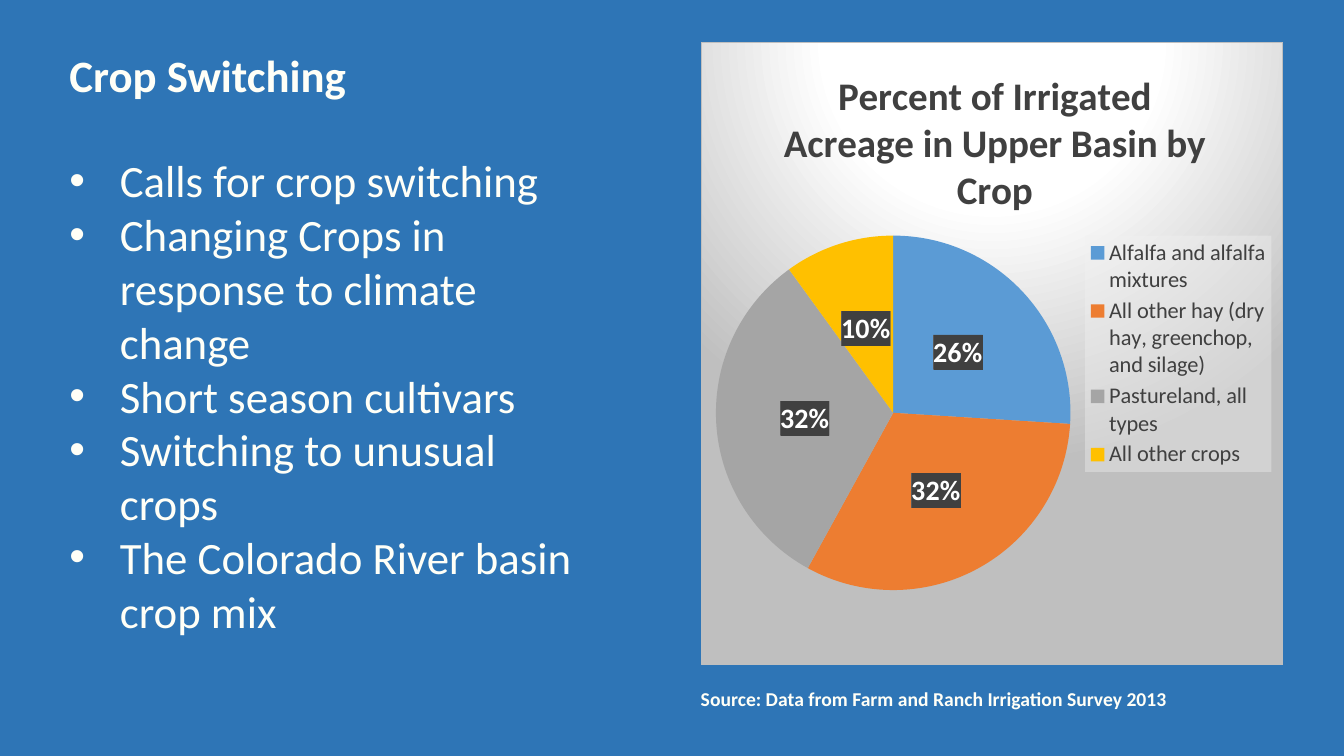
import pptx
import pptx.chart.data
import pptx.dml.color
import pptx.enum.chart
import pptx.enum.shapes
import pptx.oxml
import pptx.oxml.ns
import pptx.util

Inches = pptx.util.Inches
qn = pptx.oxml.ns.qn

HEADING = "Crop Switching"
TOPICS = [
    "Calls for crop switching",
    "Changing Crops in response to climate change",
    "Short season cultivars",
    "Switching to unusual crops",
    "The Colorado River basin crop mix",
]
SOURCE = "Source: Data from Farm and Ranch Irrigation Survey 2013"
CHART_TITLE = "Percent of Irrigated Acreage in Upper Basin by Crop"
CROPS = [  # name, percent, colour
    ("Alfalfa and alfalfa mixtures", 26, "5B9BD5"),
    ("All other hay (dry hay, greenchop, and silage)", 32, "ED7D31"),
    ("Pastureland, all types", 32, "A5A5A5"),
    ("All other crops", 10, "FFC000"),
]
THEME = {
    "font": "Calibri", "page": "2E75B6", "ink": "FFFFF7", "dark": "404040", "label": "FFFFFF",
    "body": 32, "title": 28, "percent": 20, "legend": 16, "source": 14,
}
BOXES = {  # left, top, width, height
    "heading": (0.59, 0.42, 10.74, 1.04),
    "topics": (0.59, 1.47, 5.19, 6.43),
    "chart": (6.95, 0.42, 5.78, 6.18),
    "source": (6.95, 6.81, 5.12, 0.24),
}
LAYOUTS = {  # fractions of the chart
    "title": {"x": 0.13, "y": 0.03},
    "plotArea": {"x": 0.02, "y": 0.31, "w": 0.62, "h": 0.57},
    "legend": {"x": 0.66, "y": 0.31, "w": 0.32, "h": 0.38},
}
BACKDROP = """<a:gradFill><a:gsLst>
<a:gs pos="0"><a:srgbClr val="FFFFFF"/></a:gs><a:gs pos="39000"><a:srgbClr val="FFFFFF"/></a:gs>
<a:gs pos="100000"><a:srgbClr val="BFBFBF"/></a:gs></a:gsLst>
<a:path path="circle"><a:fillToRect l="50000" t="-80000" r="50000" b="180000"/></a:path></a:gradFill>
<a:ln w="9525"><a:solidFill><a:srgbClr val="BFBFBF"/></a:solidFill></a:ln>"""
LEGEND_FILL = """<a:solidFill><a:srgbClr val="F2F2F2"><a:alpha val="39000"/></a:srgbClr></a:solidFill>"""
LABEL_FILL = """<a:pattFill prst="dkVert"><a:fgClr><a:srgbClr val="404040"/></a:fgClr>
<a:bgClr><a:srgbClr val="595959"/></a:bgClr></a:pattFill>"""


def color(key):
    return pptx.dml.color.RGBColor.from_string(THEME.get(key, key))


def style(font, size, ink, bold=False):
    values = {"name": THEME["font"], "size": pptx.util.Pt(THEME[size]), "bold": bold}
    for name, value in values.items():
        setattr(font, name, value)
    font.color.rgb = color(ink)


def place(key):
    return [Inches(length) for length in BOXES[key]]


def write(box, lines, size, bold=False):
    box.text_frame.word_wrap = True
    box.text_frame.text = "\n".join(lines)
    for para in box.text_frame.paragraphs:
        para.alignment = pptx.enum.text.PP_ALIGN.LEFT
        style(para.runs[0].font, size, "ink", bold)
    return box.text_frame


def add_bullet(para):
    props = para._p.get_or_add_pPr()
    props.set("marL", str(Inches(0.5)))
    props.set("indent", str(-Inches(0.5)))
    ns = pptx.oxml.ns.nsdecls("a")
    props.append(pptx.oxml.parse_xml(f'<a:buFont {ns} typeface="Arial"/>'))
    props.append(pptx.oxml.parse_xml(f'<a:buChar {ns} char="•"/>'))


def add_fill(anchor, fill):
    """Put chart shape properties right after the anchor element."""
    ns = pptx.oxml.ns.nsdecls("c", "a")
    anchor.addnext(pptx.oxml.parse_xml(f"<c:spPr {ns}>{fill}</c:spPr>"))


def set_layout(parent, fractions):
    modes = "".join(f'<c:{side}Mode val="edge"/>' for side in "xy")
    target = '<c:layoutTarget val="inner"/>' if parent.tag == qn("c:plotArea") else ""
    sizes = "".join(f'<c:{side} val="{value}"/>' for side, value in fractions.items())
    layout = pptx.oxml.parse_xml(
        f'<c:layout {pptx.oxml.ns.nsdecls("c")}><c:manualLayout>{target}{modes}{sizes}'
        "</c:manualLayout></c:layout>")
    for old in parent.findall(qn("c:layout")):
        parent.remove(old)
    before = [parent.find(qn(tag)) for tag in ("c:tx", "c:legendPos")]
    before = [element for element in before if element is not None]
    if before:
        before[0].addnext(layout)
    else:
        parent.insert(0, layout)


def add_crop_chart(page):
    data = pptx.chart.data.CategoryChartData()
    data.categories = [name for name, _, _ in CROPS]
    data.add_series("Series 1", [percent for _, percent, _ in CROPS])
    kinds = pptx.enum.chart
    chart = page.shapes.add_chart(kinds.XL_CHART_TYPE.PIE, *place("chart"), data).chart
    chart.font.name = THEME["font"]
    chart.has_title = chart.has_legend = True
    chart.chart_title.text_frame.text = CHART_TITLE
    style(chart.chart_title.text_frame.paragraphs[0].runs[0].font, "title", "dark", True)
    chart.legend.position = kinds.XL_LEGEND_POSITION.RIGHT
    chart.legend.include_in_layout = False
    style(chart.legend.font, "legend", "dark")

    plot = chart.plots[0]
    plot.vary_by_categories = True
    for index, (_, _, tint) in enumerate(CROPS):
        fill = plot.series[0].points[index].format.fill
        fill.solid()
        fill.fore_color.rgb = color(tint)
    plot.has_data_labels = True
    labels = plot.data_labels
    formats = {
        "show_percentage": True, "show_value": False, "number_format": "0%",
        "number_format_is_linked": False, "position": kinds.XL_LABEL_POSITION.CENTER,
    }
    for name, value in formats.items():
        setattr(labels, name, value)
    style(labels.font, "percent", "label", True)

    root = chart.element
    for name, fractions in LAYOUTS.items():
        set_layout(next(root.iter(qn(f"c:{name}"))), fractions)
    add_fill(root.find(qn("c:chart")), BACKDROP)
    add_fill(next(root.iter(qn("c:legend"))).find(qn("c:overlay")), LEGEND_FILL)
    add_fill(next(root.iter(qn("c:dLbls"))).find(qn("c:numFmt")), LABEL_FILL)


def main():
    deck = pptx.Presentation()
    deck.slide_width, deck.slide_height = Inches(13.33), Inches(7.5)
    page = deck.slides.add_slide(deck.slide_layouts[6])
    page.background.fill.solid()
    page.background.fill.fore_color.rgb = color("page")

    write(page.shapes.add_textbox(*place("heading")), [HEADING], "body", True)
    add_crop_chart(page)

    source = page.shapes.add_shape(pptx.enum.shapes.MSO_SHAPE.RECTANGLE, *place("source"))
    source.shadow.inherit = False
    source.fill.solid()
    source.fill.fore_color.rgb = color("page")
    source.line.fill.background()
    frame = write(source, [SOURCE], "source", True)
    for side in ("left", "top", "right", "bottom"):
        setattr(frame, f"margin_{side}", 0)

    topics = write(page.shapes.add_textbox(*place("topics")), TOPICS, "body")
    for para in topics.paragraphs:
        add_bullet(para)
    deck.save("out.pptx")


if __name__ == "__main__":
    main()
